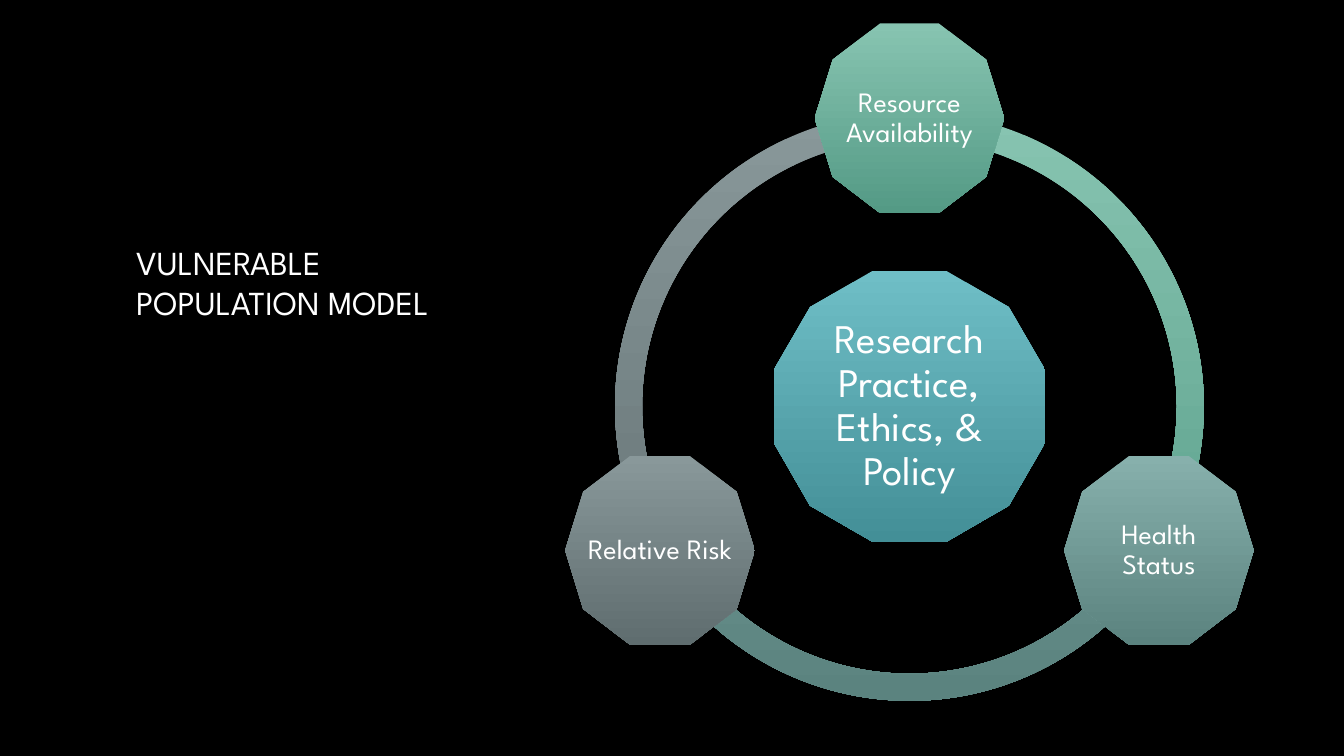
from math import cos, radians, sin

from pptx import Presentation
from pptx import util as u
from pptx.dml.color import RGBColor
from pptx.enum import shapes, text

BLACK = RGBColor(0x00, 0x00, 0x00)
WHITE = RGBColor(0xFF, 0xFF, 0xFF)
GREEN = (RGBColor(0x87, 0xC4, 0xB1), RGBColor(0x54, 0x9A, 0x85))
TEAL = (RGBColor(0x87, 0xB0, 0xAC), RGBColor(0x5B, 0x83, 0x7F))
GREY = (RGBColor(0x89, 0x98, 0x9A), RGBColor(0x5F, 0x6D, 0x6F))
BLUE = (RGBColor(0x6F, 0xBE, 0xC6), RGBColor(0x43, 0x8F, 0x97))

# Lengths in centimetres
CENTRE = (22.92, 10.24)
RING_SIZE, HUB_SIZE, FACTOR_SIZE = 14.84, 6.84, 4.78
ORBIT_RADIUS = 7.26
RING_THICKNESS = 0.046

# Label, start angle in degrees clockwise from the right, gradient
FACTORS = [
    ("Relative Risk", 150, GREY),
    ("Health Status", 30, TEAL),
    ("Resource Availability", 270, GREEN),
]


class ModelSlide:
    """Holds the style and the slide being drawn."""

    font_name = "League Spartan"
    font_colour = WHITE

    def __init__(self, deck):
        self.slide = deck.slides.add_slide(deck.slide_layouts[6])
        backdrop = self.slide.background.fill
        backdrop.solid()
        backdrop.fore_color.rgb = BLACK

    def set_wording(self, frame, wording, size, inset, paragraph_format):
        """Fill a text frame; inset is (horizontal, vertical) in cm."""
        across, down = map(u.Cm, inset)
        frame_format = {
            "word_wrap": True,
            "margin_left": across, "margin_right": across,
            "margin_top": down, "margin_bottom": down,
        }
        for name, value in frame_format.items():
            setattr(frame, name, value)
        paragraph = frame.paragraphs[0]
        for name, value in paragraph_format.items():
            setattr(paragraph, name, value)
        run = paragraph.add_run()
        run.text = wording
        run.font.name = self.font_name
        run.font.size = u.Pt(size)
        run.font.color.rgb = self.font_colour

    def title(self, wording, left, top, width, height):
        box = self.slide.shapes.add_textbox(*map(u.Cm, (left, top, width, height)))
        box.text_frame.vertical_anchor = text.MSO_ANCHOR.BOTTOM
        self.set_wording(box.text_frame, wording, 24, (0.25, 0.13),
                         {"alignment": text.PP_ALIGN.LEFT})

    def gradient_shape(self, preset, centre, size, gradient):
        """Add a square-framed shape around its centre, shaded top to bottom."""
        left, top = (middle - size / 2 for middle in centre)
        figure = self.slide.shapes.add_shape(
            preset, *map(u.Cm, (left, top, size, size)))
        figure.shadow.inherit = False
        figure.line.fill.background()
        figure.fill.gradient()
        figure.fill.gradient_angle = 270
        for stop, colour in zip(figure.fill.gradient_stops, gradient):
            stop.color.rgb = colour
        return figure

    def ring_arc(self, start, gradient):
        """Add one third of the ring, clockwise from the start angle."""
        arc = self.gradient_shape(
            shapes.MSO_SHAPE.BLOCK_ARC, CENTRE, RING_SIZE, gradient)
        angles = (start, (start + 120) % 360)
        # An angle adjustment counts 0.6 per degree
        for index, value in enumerate([a * 0.6 for a in angles] + [RING_THICKNESS]):
            arc.adjustments[index] = value

    def labelled(self, preset, wording, centre, size, gradient, font_size):
        polygon = self.gradient_shape(preset, centre, size, gradient)
        polygon.text_frame.vertical_anchor = text.MSO_ANCHOR.MIDDLE
        self.set_wording(polygon.text_frame, wording, font_size, (0.08, 0.08),
                         {"alignment": text.PP_ALIGN.CENTER, "line_spacing": 0.9})


def main():
    deck = Presentation()
    deck.slide_width, deck.slide_height = u.Cm(33.87), u.Cm(19.05)
    model = ModelSlide(deck)
    model.title("VULNERABLE POPULATION MODEL", 3.18, 4.45, 9.86, 3.81)
    for _, start, gradient in FACTORS:
        model.ring_arc(start, gradient)
    model.labelled(shapes.MSO_SHAPE.DODECAGON, "Research Practice, Ethics, & Policy",
                   CENTRE, HUB_SIZE, BLUE, 29)
    for label, start, gradient in reversed(FACTORS):
        angle = radians(start)
        centre = (CENTRE[0] + ORBIT_RADIUS * cos(angle),
                  CENTRE[1] + ORBIT_RADIUS * sin(angle))
        model.labelled(shapes.MSO_SHAPE.DECAGON, label, centre,
                       FACTOR_SIZE, gradient, 20)
    deck.save("out.pptx")


if __name__ == "__main__":
    main()
